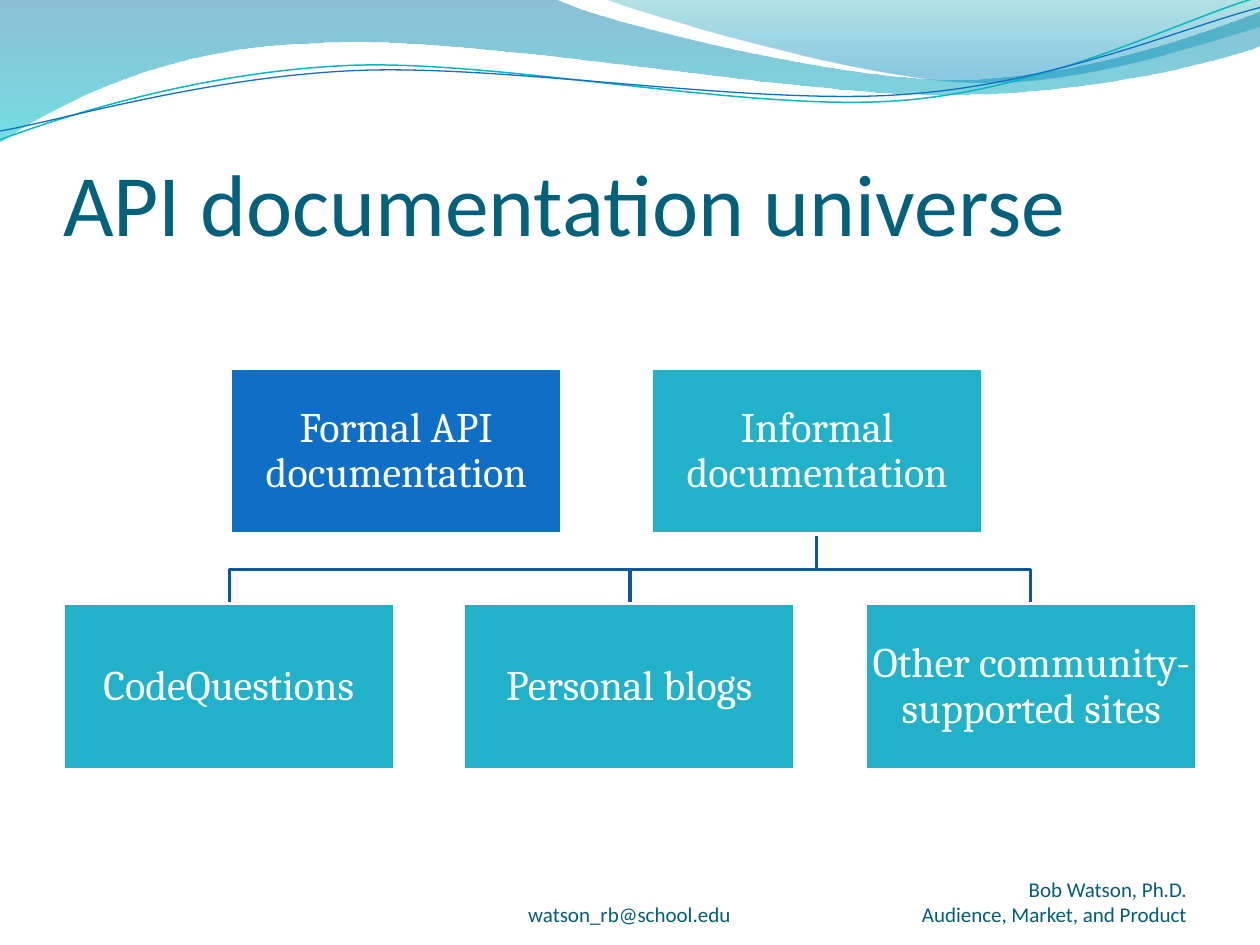
"""Build the API documentation universe slide."""
from lxml import etree
from pptx import Presentation
from pptx.dml.color import RGBColor
from pptx.enum.shapes import MSO_SHAPE
from pptx.enum.text import MSO_ANCHOR, PP_ALIGN
from pptx.oxml.ns import qn
from pptx.util import Pt

RECT = MSO_SHAPE.RECTANGLE
MIDDLE, BOTTOM = MSO_ANCHOR.MIDDLE, MSO_ANCHOR.BOTTOM
LEFT, CENTER, RIGHT = PP_ALIGN.LEFT, PP_ALIGN.CENTER, PP_ALIGN.RIGHT
PX = 9144
rgb = RGBColor.from_string


def trace(start, parts, close=False):
    """Draw lines (2 numbers) and Bezier curves (6 numbers) from start."""
    points = [(part[i] * PX, part[i + 1] * PX)
              for part in parts for i in range(0, len(part), 2)]
    pen = shapes.build_freeform(start[0] * PX, start[1] * PX)
    pen.add_line_segments(points, close=close)
    shape = pen.convert_to_shape()
    shape.shadow.inherit = False
    legs = iter(list(shape._element.iter(qn("a:lnTo"))))
    for part in parts:
        leg = next(legs)
        if len(part) == 6:
            curve = etree.Element(qn("a:cubicBezTo"))
            leg.addprevious(curve)
            for old in (leg, next(legs), next(legs)):
                curve.append(old[0])
                old.getparent().remove(old)
    return shape


def write(frame, lines, size, font, color, align):
    """Write lines into the first paragraph of a frame."""
    para = frame.paragraphs[0]
    para.alignment = align
    for i, line in enumerate(lines):
        if i:
            para.add_line_break()
        run = para.add_run()
        run.text = line
        run.font.size = Pt(size)
        run.font.name = font
        run.font.color.rgb = rgb(color)
    return para


deck = Presentation()
deck.slide_width, deck.slide_height = 1000 * PX, 750 * PX
slide = deck.slides.add_slide(deck.slide_layouts[5])
shapes = slide.shapes

waves = [
    ((-1, 0),
     [(440, -1), (476, 17, 664, 63, 758, 63), (853, 63, 958, 26, 1000, 9),
      (1001, 36), (983, 44, 870, 76, 746, 75), (622, 75, 382, 28, 257, 34),
      (129, 36, 46, 83, -1, 113)],
     [(0, "0074A1", 45), (1, "00C6CF", 55)]),
    ((479, -1),
     [(509, 11, 682, 62, 769, 65), (856, 69, 961, 32, 1000, 21), (1000, 0)],
     [(0, "00A1A9", 30), (0.8, "008BBF", 45)]),
]
for start, parts, stops in waves:
    wave = trace(start, parts, True)
    wave.line.fill.background()
    wave.fill.gradient()
    wave.fill.gradient_angle = 270
    for stop, (place, color, _) in zip(wave.fill.gradient_stops, stops):
        stop.position = place
        stop.color.rgb = rgb(color)
    tints = wave._element.spPr.iter(qn("a:srgbClr"))
    for tint, (_, _, alpha) in zip(tints, stops):
        etree.SubElement(tint, qn("a:alpha")).set("val", str(alpha * 1000))

strands = [
    ((0, 111),
     [(48, 93, 158, 57, 277, 52), (395, 47, 593, 89, 713, 80),
      (833, 71, 938, 15, 998, -2)], "0AB8BF", 0.85),
    ((0, 104),
     [(47, 96, 164, 61, 283, 56), (403, 51, 597, 84, 717, 75),
      (836, 67, 941, 21, 1000, 6)], "0F6FC6", 0.75),
]
stem = 648
links = [((stem, 423), [(stem, 452), (x, 452), (x, 479)], "0C599F", 2)
         for x in (818, 500, 182)]
for start, parts, color, width in strands + links:
    strand = trace(start, parts)
    strand.fill.background()
    strand.line.color.rgb = rgb(color)
    strand.line.width = Pt(width)

title = shapes.title
title.left, title.top, title.width, title.height = (
    50 * PX, 77 * PX, 900 * PX, 125 * PX)
frame = title.text_frame
frame.margin_left = frame.margin_right = frame.margin_bottom = 0
frame.margin_top = 5 * PX
frame.vertical_anchor = BOTTOM
write(frame, ["API documentation universe"], 50, "Calibri", "04617B", LEFT)

boxes = [
    (183, 292, "Formal API documentation", "0F6FC6"),
    (517, 292, "Informal documentation", "21B2C9"),
    (50, 479, "CodeQuestions", "21B2C9"),
    (368, 479, "Personal blogs", "21B2C9"),
    (687, 479, "Other community-supported sites", "21B2C9"),
]
for x, y, text, color in boxes:
    box = shapes.add_shape(RECT, x * PX, y * PX, 263 * PX, 132 * PX)
    box.shadow.inherit = False
    box.fill.solid()
    box.fill.fore_color.rgb = rgb(color)
    box.line.color.rgb = rgb("FFFFFF")
    box.line.width = Pt(2)
    frame = box.text_frame
    frame.word_wrap = True
    frame.vertical_anchor = MIDDLE
    frame.margin_left = frame.margin_right = 2 * PX
    frame.margin_top = frame.margin_bottom = 2 * PX
    para = write(frame, [text], 24, "Cambria", "FFFFFF", CENTER)
    para.line_spacing = 0.9

notes = [
    (719, 691, 233, 50, RIGHT,
     ["Bob Watson, Ph.D.", "Audience, Market, and Product"]),
    (407, 711, 185, 30, CENTER, ["watson_rb@school.edu"]),
]
for x, y, w, h, align, lines in notes:
    note = shapes.add_textbox(x * PX, y * PX, w * PX, h * PX)
    note.text_frame.word_wrap = False
    write(note.text_frame, lines, 12, "Calibri", "045D75", align)

deck.save("out.pptx")
